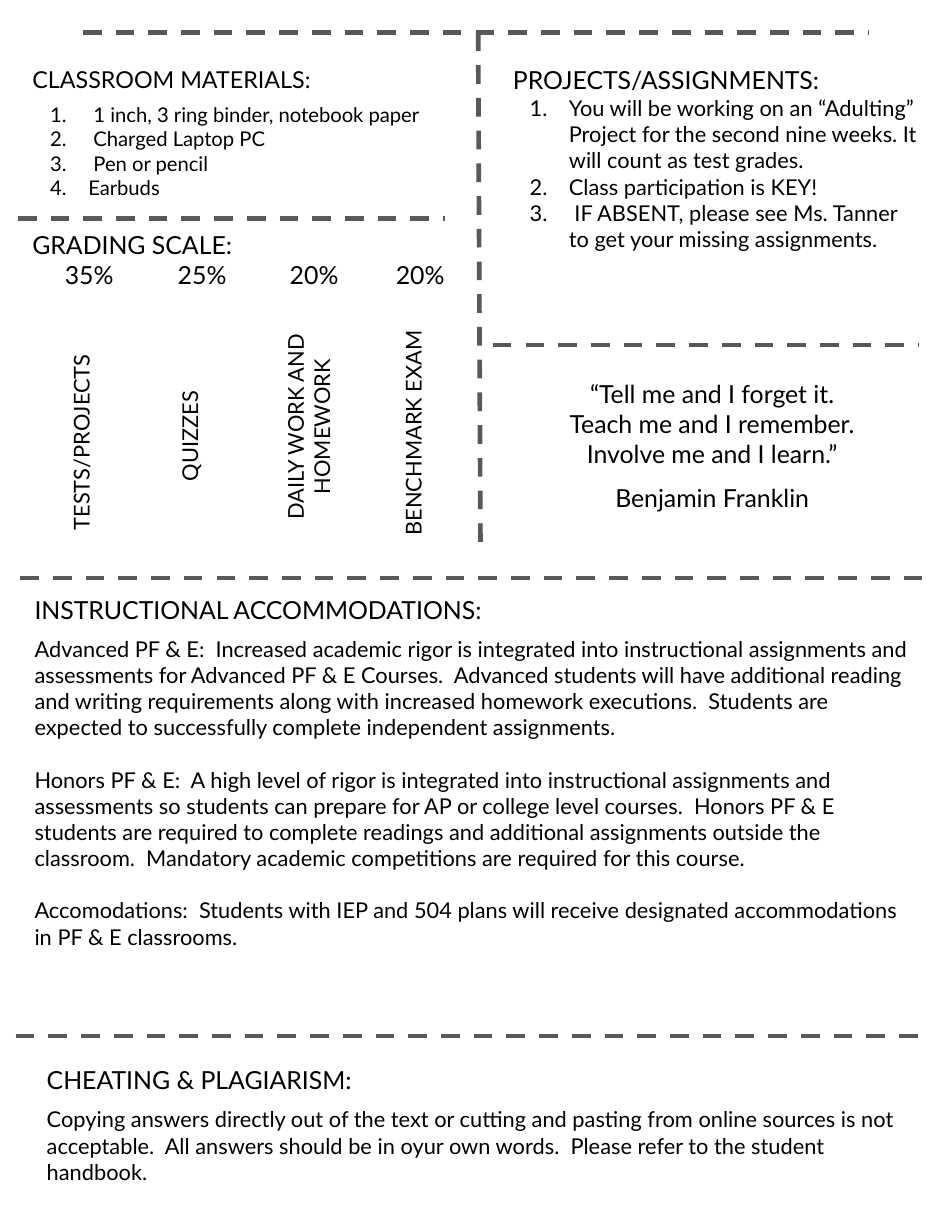
from dataclasses import dataclass
from lxml.etree import SubElement
from pptx import Presentation
from pptx.dml.color import RGBColor as RGB
from pptx.enum.dml import MSO_LINE
from pptx.enum.shapes import MSO_CONNECTOR, MSO_SHAPE
from pptx.enum.text import MSO_ANCHOR, PP_ALIGN
from pptx.oxml.ns import qn
from pptx.util import Pt


@dataclass(frozen=True)
class Theme:
    font: str = "Lato"
    ink: RGB = RGB(0, 0, 0)
    rule: RGB = RGB(0x59, 0x59, 0x59)
    paper: RGB = RGB(255, 255, 255)
    heading: int = 16
    small_heading: int = 15
    body: int = 14
    small_body: int = 13
    inset: float = 7.2
    rule_width: int = 3


T = Theme()

ACCOMMODATIONS = [
    "Advanced PF & E:  Increased academic rigor is integrated into instructional assignments and "
    "assessments for Advanced PF & E Courses.  Advanced students will have additional reading "
    "and writing requirements along with increased homework executions.  Students are "
    "expected to successfully complete independent assignments.",
    "Honors PF & E:  A high level of rigor is integrated into instructional assignments and "
    "assessments so students can prepare for AP or college level courses.  Honors PF & E "
    "students are required to complete readings and additional assignments outside the "
    "classroom.  Mandatory academic competitions are required for this course.",
    "Accomodations:  Students with IEP and 504 plans will receive designated accommodations "
    "in PF & E classrooms.",
]
CHEATING = (
    "Copying answers directly out of the text or cutting and pasting from online sources is not "
    "acceptable.  All answers should be in oyur own words.  Please refer to the student handbook."
)
MATERIALS = [" 1 inch, 3 ring binder, notebook paper", " Charged Laptop PC",
             " Pen or pencil", "Earbuds"]
PROJECTS = [
    "You will be working on an “Adulting” Project for the second nine weeks. "
    "It will count as test grades.",
    "Class participation is KEY!",
    " IF ABSENT, please see Ms. Tanner to get your missing assignments.",
]
QUOTE = ["“Tell me and I forget it.", "Teach me and I remember.", "Involve me and I learn.”"]
WEIGHTS = ["35%", "25%", "20%", "20%"]
WEIGHT_TABS = [20.9, 93.5, 165.5, 233.7]
CATEGORIES = [
    ("TESTS/PROJECTS", (-18.7, 259.9, 159.1, 49), PP_ALIGN.CENTER),
    ("QUIZZES", (67.7, 253.4, 131, 54), PP_ALIGN.CENTER),
    ("DAILY WORK AND HOMEWORK", (110.9, 249.1, 177.1, 50.4), PP_ALIGN.CENTER),
    ("BENCHMARK EXAM", (198, 249.1, 154.1, 50.4), PP_ALIGN.LEFT),
]
RULES = [
    (11.5, 140.4, 285.8, 140.4),
    (13, 371.5, 594, 371.5),
    (53.3, 20.9, 558.7, 20.9),
    (307.4, 20.9, 308.9, 355),
    (316.8, 221.8, 591.1, 221.8),
    (10.1, 666, 591.1, 666),
]


def add_text(tf, text, size=T.body, align=PP_ALIGN.LEFT, before=0, hang=None, tabs=()):
    p = tf.paragraphs[0]
    if p.runs:
        p = tf.add_paragraph()
    p.alignment = align
    p.space_before = Pt(before)
    pPr = p._p.get_or_add_pPr()
    if hang:
        pPr.set("marL", str(Pt(36)))
        pPr.set("indent", str(Pt(-hang)))
        SubElement(pPr, qn("a:buFont"), typeface=T.font)
        SubElement(pPr, qn("a:buAutoNum"), type="arabicPeriod")
    if tabs:
        tab_list = SubElement(pPr, qn("a:tabLst"))
        for pos in tabs:
            SubElement(tab_list, qn("a:tab"), pos=str(Pt(pos)), algn="l")
    r = p.add_run()
    r.text = text
    r.font.name, r.font.size = T.font, Pt(size)
    r.font.color.rgb = T.ink


def set_frame(sp):
    tf = sp.text_frame
    tf.word_wrap = True
    tf.vertical_anchor = MSO_ANCHOR.TOP
    tf.margin_left = tf.margin_top = tf.margin_right = tf.margin_bottom = Pt(T.inset)
    return tf


def add_box(s, box, rotation=0):
    sp = s.shapes.add_textbox(*map(Pt, box))
    sp.rotation = rotation
    return set_frame(sp)


def add_panel(s, box):
    sp = s.shapes.add_shape(MSO_SHAPE.RECTANGLE, *map(Pt, box))
    sp.shadow.inherit = False
    sp.fill.solid()
    sp.fill.fore_color.rgb = T.paper
    sp.line.fill.background()
    return set_frame(sp)


def add_rule(s, ends):
    c = s.shapes.add_connector(MSO_CONNECTOR.STRAIGHT, *map(Pt, ends))
    c.line.color.rgb = T.rule
    c.line.width = Pt(T.rule_width)
    c.line.dash_style = MSO_LINE.DASH
    SubElement(c._element.spPr, qn("a:effectLst"))


def add_list(s, box, heading, heading_size, items, size, hang, gap=0):
    tf = add_box(s, box)
    add_text(tf, heading, size=heading_size)
    for i, item in enumerate(items):
        add_text(tf, item, size=size, hang=hang, before=0 if i else gap)


def add_section(s, box, heading, paragraphs):
    tf = add_box(s, box)
    add_text(tf, heading, size=T.heading)
    for i, text in enumerate(paragraphs):
        add_text(tf, text, before=16.8 if i else 7.2)


def add_grading(s):
    tf = add_box(s, (13.7, 140.4, 293.8, 74.2))
    add_text(tf, "GRADING SCALE:", size=T.heading)
    add_text(tf, "\t" + "\t".join(WEIGHTS), size=T.heading, tabs=WEIGHT_TABS)
    for name, box, align in CATEGORIES:
        add_text(add_box(s, box, rotation=270), name, align=align)


def add_quote(s):
    tf = add_panel(s, (324.7, 236.2, 266.4, 105.1))
    for text in QUOTE:
        add_text(tf, text, size=T.heading, align=PP_ALIGN.CENTER)
    add_text(tf, "Benjamin Franklin", size=T.heading, align=PP_ALIGN.CENTER, before=9.6)


def main():
    prs = Presentation()
    prs.slide_width, prs.slide_height = Pt(612), Pt(792)
    s = prs.slides.add_slide(prs.slide_layouts[6])
    add_section(s, (15.1, 375.1, 577.4, 249.1), "INSTRUCTIONAL ACCOMMODATIONS:", ACCOMMODATIONS)
    add_list(s, (13.7, 34.6, 277.2, 190.1), "CLASSROOM MATERIALS:", T.small_heading,
             MATERIALS, T.small_body, hang=24.5, gap=6)
    add_grading(s)
    add_list(s, (322.6, 34.6, 277.2, 177.1), "PROJECTS/ASSIGNMENTS:", T.heading,
             PROJECTS, T.body, hang=25.2)
    add_quote(s)
    for ends in RULES:
        add_rule(s, ends)
    add_section(s, (23, 677.5, 561.6, 92.2), "CHEATING & PLAGIARISM:", [CHEATING])
    prs.save("out.pptx")


if __name__ == "__main__":
    main()
